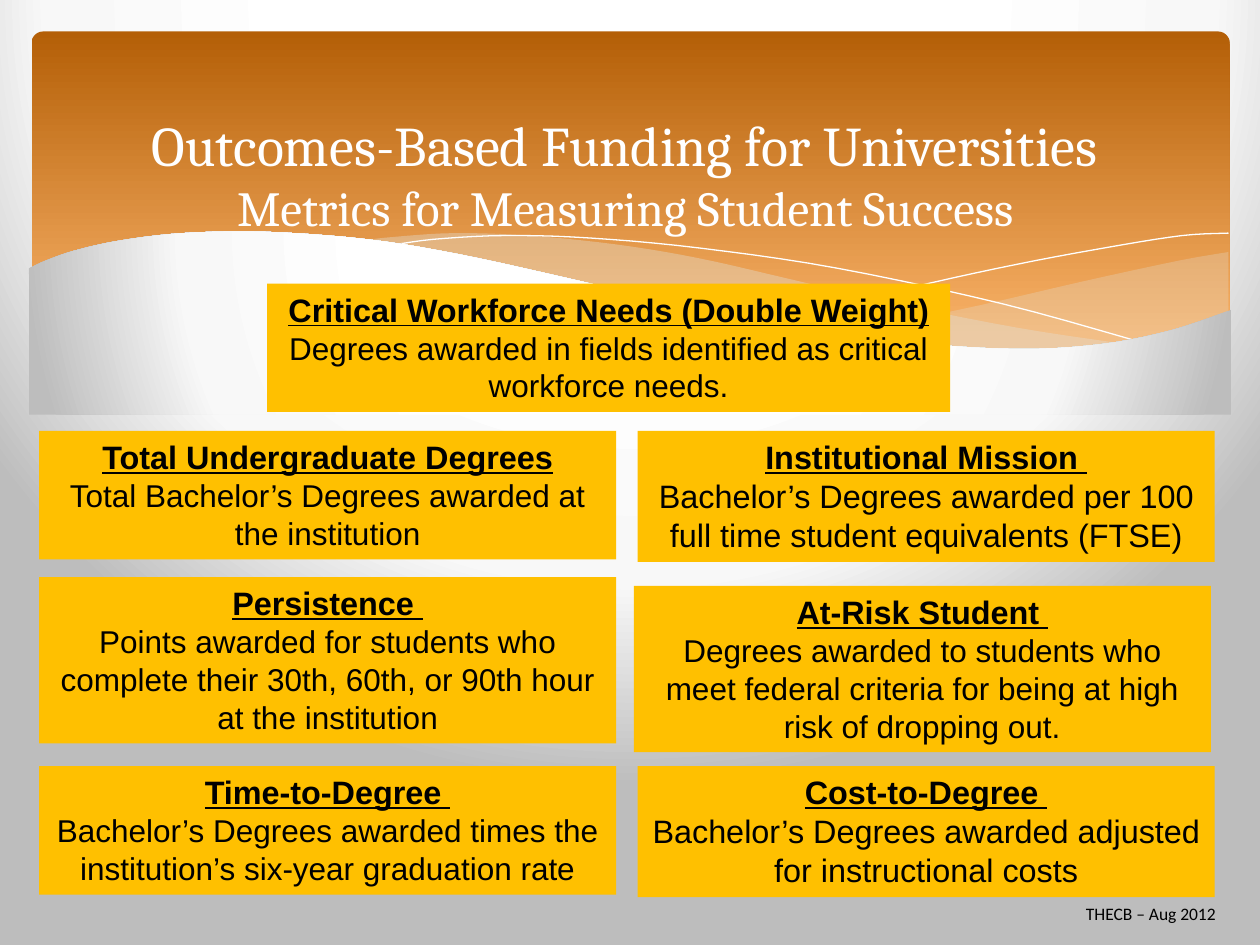
from lxml.etree import SubElement
from pptx import Presentation
from pptx.dml.color import RGBColor
from pptx.enum.shapes import MSO_SHAPE
from pptx.enum.text import MSO_ANCHOR, MSO_AUTO_SIZE as AUTO, PP_ALIGN
from pptx.oxml.ns import qn
from pptx.util import Inches, Pt

COLORS = {
    "white": "FFFFFF", "pale": "F8F8F8", "grey": "BDBDBD", "black": "000000",
    "rust": "B45F07", "peach": "F9B268", "sand": "E3DED1", "gold": "FFC000",
}
COLS = 1000  # the slide is a grid of 1000 columns by 750 rows
UNIT = Inches(10) // COLS
FINE = 100   # steps within a column, for smooth curves

GLOW = [(40, "white"), (74, "pale"), (100, "grey")]
BAND = [(0, "rust"), (90, "peach")]

# Wave knots, in columns and rows from the header's top left corner
RIGHT_SWELL = [
    [(950, 175), (910, 182), (836, 198), (754, 217), (681, 232), (636, 240)],
    [(636, 240), (694, 246), (744, 251), (799, 252), (847, 249), (896, 240),
     (950, 222)],
]
LONG_SWELL = [
    [(868, 248), (782, 235), (681, 215), (604, 197), (530, 180), (464, 169),
     (395, 162), (336, 160), (288, 163), (261, 166)],
    [(261, 166), (317, 174), (379, 186), (424, 197), (505, 215), (593, 233),
     (670, 245), (748, 252), (813, 252), (868, 248)],
]
FALLING_LINE = [(284, 170), (319, 165), (376, 162), (444, 164), (531, 172),
                (640, 188), (770, 216), (882, 247)]
RISING_LINE = [(588, 232), (695, 204), (781, 185), (856, 171), (913, 162),
               (950, 160)]
FRONT_WAVE = [(952, 221), (905, 237), (850, 248), (784, 252), (701, 247),
              (601, 233), (504, 214), (422, 195), (340, 177), (267, 165),
              (186, 159), (121, 160), (70, 166), (34, 174), (11, 182), (-2, 188)]
FRONT_BASE = [(-2, 304), (952, 304)]

# Box (column, row, width, height), heading, body, body size
CARDS = [
    ((31, 342, 458, 102), "Total Undergraduate Degrees",
     "Total Bachelor’s Degrees awarded at the institution", 18),
    ((506, 342, 458, 104), "Institutional Mission ",
     "Bachelor’s Degrees awarded per 100 full time student equivalents (FTSE)", 18.5),
    ((31, 608, 458, 102), "Time-to-Degree ",
     "Bachelor’s Degrees awarded times the institution’s six-year graduation rate", 18),
    ((506, 608, 458, 104), "Cost-to-Degree ",
     "Bachelor’s Degrees awarded adjusted for instructional costs", 18.5),
    ((503, 465, 458, 132), "At-Risk Student ",
     "Degrees awarded to students who meet federal criteria for being at high "
     "risk of dropping out.", 18),
    ((31, 458, 458, 132), "Persistence ",
     "Points awarded for students who complete their 30th, 60th, or 90th hour "
     "at the institution", 18),
    ((212, 225, 542, 102), "Critical Workforce Needs (Double Weight)",
     "Degrees awarded in fields identified as critical workforce needs.", 18),
]


def rgb(name):
    return RGBColor.from_string(COLORS[name])


def emu(box):
    return [v * UNIT for v in box]


def set_gradient(fill, parent, stops, circular):
    """Fill with stops (percent, colour), as a wide glow or from top to bottom."""
    fill.solid()
    solid = next(parent.iter(qn("a:solidFill")))
    grad = solid.makeelement(qn("a:gradFill"), {"rotWithShape": "1"})
    stop_list = SubElement(grad, qn("a:gsLst"))
    for pos, name in stops:
        stop = SubElement(stop_list, qn("a:gs"), pos=str(pos * 1000))
        SubElement(stop, qn("a:srgbClr"), val=COLORS[name])
    if circular:
        glow = SubElement(grad, qn("a:path"))
        glow.set("path", "circle")
        SubElement(glow, qn("a:fillToRect"), l="20000", t="-40000",
                   r="20000", b="140000")
    else:
        SubElement(grad, qn("a:lin"), ang="5400000", scaled="0")
    solid.getparent().replace(solid, grad)


def smooth(knots, steps=5):
    """Return points on a Catmull-Rom curve through the knots."""
    ends = [knots[0], *knots, knots[-1]]
    points = [knots[0]]
    for a, b, c, d in zip(ends, ends[1:], ends[2:], ends[3:]):
        for i in range(1, steps + 1):
            t = i / steps
            points.append(tuple(
                (2 * q + (r - p) * t + (2 * p - 5 * q + 4 * r - s) * t ** 2
                 + (3 * q - p - 3 * r + s) * t ** 3) / 2
                for p, q, r, s in zip(a, b, c, d)))
    return points


def add_path(s, box, points, closed):
    pts = [(round((box[0] + x) * FINE), round((box[1] + y) * FINE))
           for x, y in points]
    builder = s.shapes.build_freeform(*pts[0], scale=UNIT / FINE)
    builder.add_line_segments(pts[1:], close=closed)
    sp = builder.convert_to_shape()
    sp.shadow.inherit = False
    if closed:
        sp.line.fill.background()
    else:
        sp.fill.background()
        sp.line.color.rgb = rgb("white")
        sp.line.width = 0
    return sp


def add_header(s, box):
    """Orange band whose lower edge is cut by waves."""
    band = s.shapes.add_shape(MSO_SHAPE.ROUNDED_RECTANGLE, *emu(box))
    band.adjustments[0] = 0.034
    band.shadow.inherit = False
    band.line.fill.background()
    set_gradient(band.fill, band._element.spPr, BAND, circular=False)

    for edges, opacity in ((RIGHT_SWELL, 29), (LONG_SWELL, 40)):
        swell = add_path(s, box, [p for e in edges for p in smooth(e)], True)
        swell.fill.solid()
        swell.fill.fore_color.rgb = rgb("sand")
        color = next(swell._element.spPr.iter(qn("a:srgbClr")))
        SubElement(color, qn("a:alpha"), val=str(opacity * 1000))
    for knots in (FALLING_LINE, RISING_LINE):
        add_path(s, box, smooth(knots), False)
    front = add_path(s, box, smooth(FRONT_WAVE) + FRONT_BASE, True)
    set_gradient(front.fill, front._element.spPr, GLOW, circular=True)


def add_title(s, box, title, subtitle):
    tf = s.shapes.add_textbox(*emu(box)).text_frame
    tf.word_wrap = True
    tf.vertical_anchor = MSO_ANCHOR.MIDDLE
    p = tf.paragraphs[0]
    p.alignment = PP_ALIGN.CENTER
    p.font.name = "Cambria"
    p.font.color.rgb = rgb("white")
    for text, size in ((title, 32), (subtitle, 28)):
        if p.runs:
            p.add_line_break()
        r = p.add_run()
        r.text = text
        r.font.size = Pt(size)


def add_card(s, box, heading, body, body_size):
    sp = s.shapes.add_shape(MSO_SHAPE.RECTANGLE, *emu(box))
    sp.shadow.inherit = False
    sp.fill.solid()
    sp.fill.fore_color.rgb = rgb("gold")
    sp.line.fill.background()
    tf = sp.text_frame
    tf.word_wrap = True
    tf.auto_size = AUTO.SHAPE_TO_FIT_TEXT
    tf.vertical_anchor = MSO_ANCHOR.TOP
    tf.text = f"{heading}\n{body}"
    for p, size, strong in zip(tf.paragraphs, (18.5, body_size), (True, False)):
        p.alignment = PP_ALIGN.CENTER
        p.font.name = "Arial"
        p.font.size = Pt(size)
        p.font.bold = p.font.underline = strong
        p.font.color.rgb = rgb("black")


def add_source_note(s, box, text):
    tf = s.shapes.add_textbox(*emu(box)).text_frame
    tf.word_wrap = False
    tf.auto_size = AUTO.SHAPE_TO_FIT_TEXT
    p = tf.paragraphs[0]
    p.text = text
    p.font.name = "Calibri"
    p.font.size = Pt(10)
    p.font.color.rgb = rgb("black")


def main():
    prs = Presentation()
    prs.slide_width, prs.slide_height = COLS * UNIT, 750 * UNIT
    s = prs.slides.add_slide(prs.slide_layouts[6])
    set_gradient(s.background.fill, s._element, GLOW, circular=True)
    add_header(s, (25, 25, 951, 270))
    add_title(s, (50, 75, 892, 125), "Outcomes-Based Funding for Universities",
              "Metrics for Measuring Student Success")
    for card in CARDS:
        add_card(s, *card)
    add_source_note(s, (852, 712, 125, 27), "THECB – Aug 2012")
    prs.save("out.pptx")


if __name__ == "__main__":
    main()
